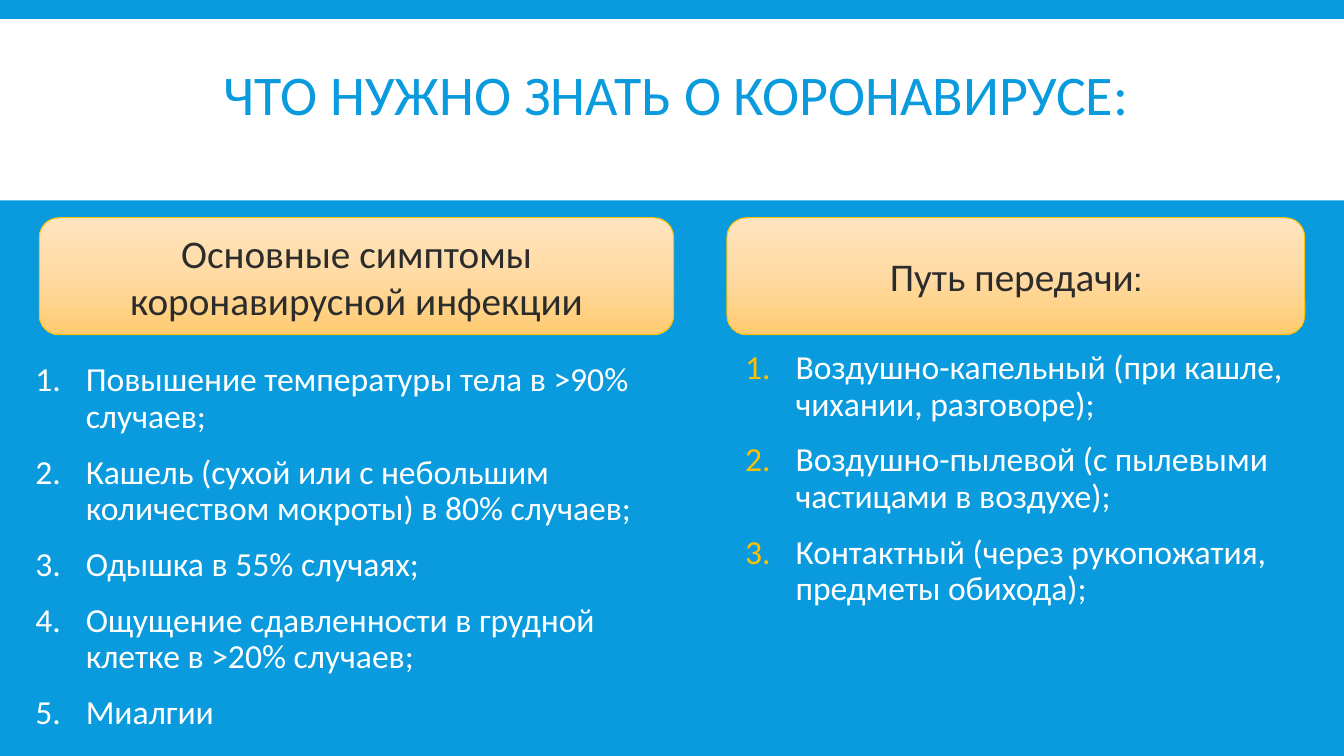
import copy
from dataclasses import dataclass

import pptx
import pptx.util
import pptx.dml.color
import pptx.enum.shapes
import pptx.enum.text
import pptx.oxml
import pptx.oxml.ns
from pptx.oxml.ns import qn


@dataclass
class Theme:
    blue: str = "099BDD"
    white: str = "FFFFFF"
    gold: str = "FFC000"
    dark: str = "2C2C2C"
    peach: tuple = ("FFE5BF", "FFDAA3", "FFCB70")
    face: str = "Calibri"
    accent: str = "Cabin"
    title: int = 40
    head: int = 28
    body: int = 24


def rgb(code):
    return pptx.dml.color.RGBColor.from_string(code)


class Deck:
    """Places are left, top, width and height in percent of the slide."""

    def __init__(self, theme):
        self.theme = theme
        self.prs = pptx.Presentation()
        self.prs.slide_width = pptx.util.Inches(13.33)
        self.prs.slide_height = pptx.util.Inches(7.5)
        self.slide = self.prs.slides.add_slide(self.prs.slide_layouts[3])
        fill = self.slide.background.fill
        fill.solid()
        fill.fore_color.rgb = rgb(theme.blue)

    def place(self, place):
        wide, high = self.prs.slide_width, self.prs.slide_height
        return [round(part * side / 100)
                for part, side in zip(place, (wide, high, wide, high))]

    def move(self, shape, place):
        shape.left, shape.top, shape.width, shape.height = self.place(place)

    def style(self, para, size, color, face=None):
        para.font.size = pptx.util.Pt(size)
        para.font.color.rgb = rgb(color)
        if face:
            para.font.name = face

    def shape(self, kind, place):
        shape = self.slide.shapes.add_shape(kind, *self.place(place))
        shape.shadow.inherit = False
        return shape

    def band(self, place):
        """Add a white strip behind everything else."""
        band = self.shape(pptx.enum.shapes.MSO_SHAPE.RECTANGLE, place)
        band.fill.solid()
        band.fill.fore_color.rgb = rgb(self.theme.white)
        band.line.fill.background()
        self.slide.shapes._spTree.insert(2, band._element)

    def title(self, text, place):
        title = self.slide.shapes.title
        self.move(title, place)
        frame = title.text_frame
        frame.text = text
        frame.auto_size = pptx.enum.text.MSO_AUTO_SIZE.NONE
        frame.vertical_anchor = pptx.enum.text.MSO_ANCHOR.MIDDLE
        para = frame.paragraphs[0]
        para.alignment = pptx.enum.text.PP_ALIGN.CENTER
        para.line_spacing = 0.85
        self.style(para, self.theme.title, self.theme.blue, self.theme.face)

    def head(self, parts, place):
        """Add a rounded heading from (text, font) parts."""
        box = self.shape(pptx.enum.shapes.MSO_SHAPE.ROUNDED_RECTANGLE, place)
        box.line.color.rgb = rgb(self.theme.gold)
        box.line.width = pptx.util.Pt(0.75)
        box.fill.gradient()
        box.fill.gradient_angle = 270
        stops = box._element.spPr.find(".//" + qn("a:gsLst"))
        stops.insert(1, copy.deepcopy(stops[0]))
        for i, color in enumerate(self.theme.peach):
            stop = box.fill.gradient_stops[i]
            stop.position = i / 2
            stop.color.rgb = rgb(color)
        frame = box.text_frame
        frame.word_wrap = True
        frame.vertical_anchor = pptx.enum.text.MSO_ANCHOR.MIDDLE
        para = frame.paragraphs[0]
        para.alignment = pptx.enum.text.PP_ALIGN.CENTER
        self.style(para, self.theme.head, self.theme.dark)
        for text, face in parts:
            run = para.add_run()
            run.text = text
            run.font.name = face
            run.font.color.rgb = rgb(self.theme.dark)

    def steps(self, index, items, place, color, inset=0.1):
        """Fill a body placeholder with a numbered list."""
        body = self.slide.placeholders[index]
        self.move(body, place)
        frame = body.text_frame
        frame.text = "\n".join(items)
        frame.auto_size = pptx.enum.text.MSO_AUTO_SIZE.NONE
        frame.margin_left = frame.margin_right = pptx.util.Inches(inset)
        for para in frame.paragraphs:
            para.line_spacing = 0.9
            para.space_before = pptx.util.Pt(12)
            para.space_after = pptx.util.Pt(2)
            self.number(para, color)
            self.style(para, self.theme.body, self.theme.white, self.theme.face)

    def number(self, para, color):
        props = para._p.get_or_add_pPr()
        indent = pptx.util.Inches(0.5)
        props.set("marL", str(indent))
        props.set("indent", str(-indent))
        space = pptx.oxml.ns.nsdecls("a")
        for xml in (
            f'<a:buClr {space}><a:srgbClr val="{color}"/></a:buClr>',
            f'<a:buFont {space} typeface="+mj-lt"/>',
            f'<a:buAutoNum {space} type="arabicPeriod"/>',
        ):
            props.append(pptx.oxml.parse_xml(xml))


def main():
    theme = Theme()
    deck = Deck(theme)
    deck.band((0, 2.53, 100, 24))
    deck.title("ЧТО НУЖНО ЗНАТЬ О КОРОНАВИРУСЕ:", (1.88, 2.4, 96.85, 21.2))
    deck.steps(1, (
        "Повышение температуры тела в >90% случаев;",
        "Кашель (сухой или с небольшим количеством мокроты) в 80% случаев;",
        "Одышка в 55% случаях;",
        "Ощущение сдавленности в грудной клетке в >20% случаев;",
        "Миалгии",
    ), (1.88, 47.33, 49.14, 52.67), theme.white)
    top, high = 28.8, 15.47
    deck.head([("Основные симптомы коронавирусной инфекции", theme.face)],
              (2.93, top, 47.19, high))
    deck.head([("Путь передачи", theme.face), (":", theme.accent)],
              (54.09, top, 42.99, high))
    deck.steps(2, (
        "Воздушно-капельный (при кашле, чихании, разговоре);",
        "Воздушно-пылевой (с пылевыми частицами в воздухе);",
        "Контактный (через рукопожатия, предметы обихода);",
    ), (55.44, 45.73, 40.21, 48.67), theme.gold, inset=0)
    deck.prs.save("out.pptx")


if __name__ == "__main__":
    main()
